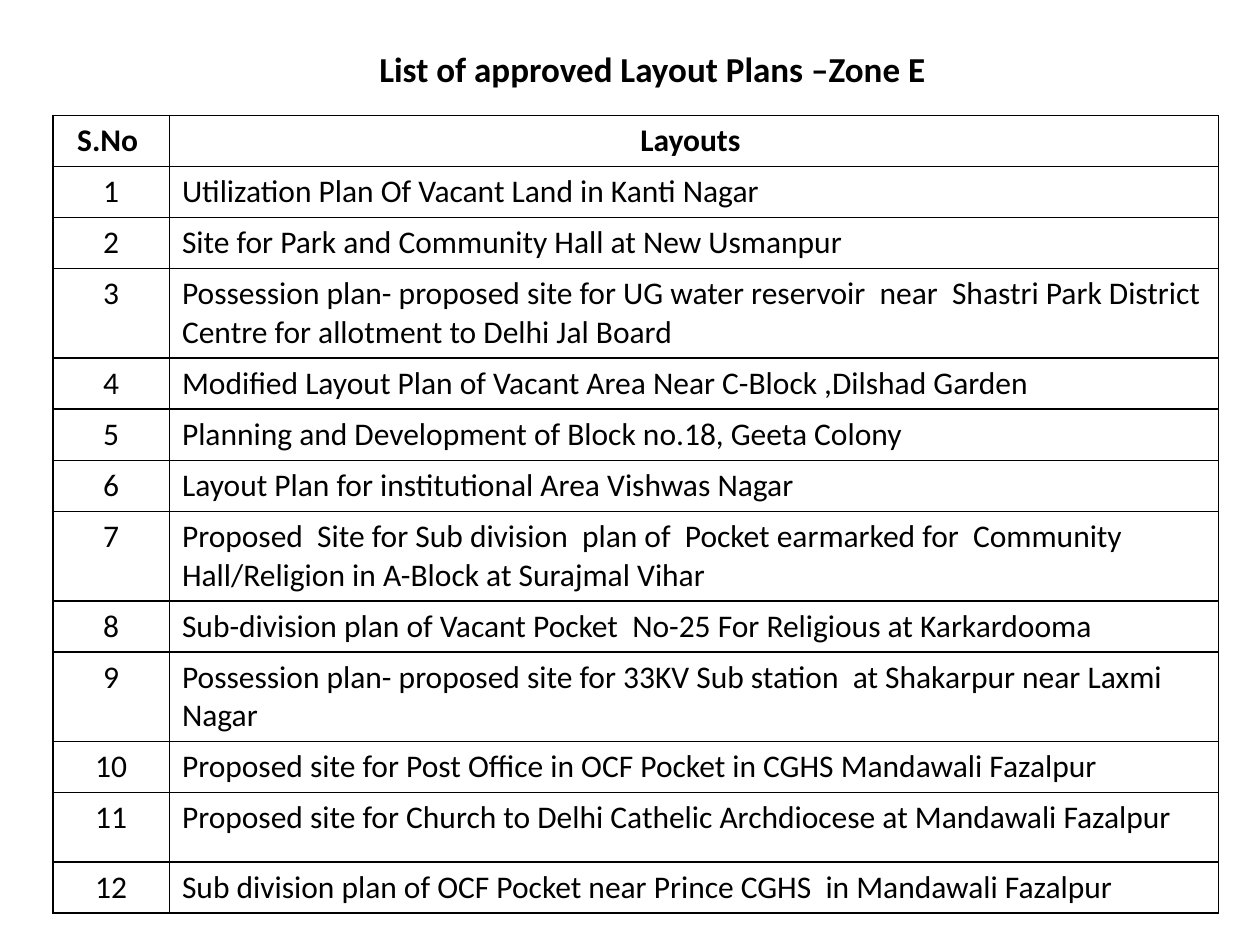
from lxml import etree
from pptx import Presentation, util as u
from pptx.dml.color import RGBColor
from pptx.enum import text
from pptx.oxml import ns

BLACK = RGBColor(0, 0, 0)
FONT = "Calibri"
WIDE, HIGH = u.Inches(10), u.Inches(7.5)
ONE, TWO, LAST = 0.4, 0.7, 0.55  # row heights in inches

HEAD = ("S.No ", "Layouts ")
PLANS = [
    ("Utilization Plan Of Vacant Land in Kanti Nagar", ONE),
    ("Site for Park and Community Hall at New Usmanpur", ONE),
    ("Possession plan- proposed site for UG water reservoir  near  Shastri Park "
     "District Centre for allotment to Delhi Jal Board", TWO),
    ("Modified Layout Plan of Vacant Area Near C-Block ,Dilshad Garden", ONE),
    ("Planning and Development of Block no.18, Geeta Colony", ONE),
    ("Layout Plan for institutional Area Vishwas Nagar", ONE),
    ("Proposed  Site for Sub division  plan of  Pocket earmarked for  Community "
     "Hall/Religion in A-Block at Surajmal Vihar", TWO),
    ("Sub-division plan of Vacant Pocket  No-25 For Religious at Karkardooma", ONE),
    ("Possession plan- proposed site for 33KV Sub station  at Shakarpur near "
     "Laxmi Nagar", TWO),
    ("Proposed site for Post Office in OCF Pocket in CGHS Mandawali Fazalpur", ONE),
    ("Proposed site for Church to Delhi Cathelic Archdiocese at Mandawali Fazalpur",
     LAST),
    ("Sub division plan of OCF Pocket near Prince CGHS  in Mandawali Fazalpur", ONE),
]


def share(left, top, width, height):
    """Turn shares of the slide's size into a box of lengths."""
    return [int(part * full) for part, full in
            zip((left, top, width, height), (WIDE, HIGH, WIDE, HIGH))]


def write(frame, words, size, bold, mid):
    frame.text = words
    para = frame.paragraphs[0]
    para.alignment = text.PP_ALIGN.CENTER if mid else text.PP_ALIGN.LEFT
    font = para.runs[0].font
    font.name, font.size, font.bold = FONT, u.Pt(size), bold
    font.color.rgb = BLACK


def edge(cell):
    """Draw a thin black line on each side of the cell."""
    props = cell._tc.get_or_add_tcPr()
    for side in ("lnL", "lnR", "lnT", "lnB"):
        line = etree.SubElement(props, ns.qn(f"a:{side}"), w=str(u.Pt(1)))
        fill = etree.SubElement(line, ns.qn("a:solidFill"))
        etree.SubElement(fill, ns.qn("a:srgbClr"), val=str(BLACK))


def add_title(slide, box):
    frame = slide.shapes.add_textbox(*box).text_frame
    frame.word_wrap = True
    frame.auto_size = text.MSO_AUTO_SIZE.SHAPE_TO_FIT_TEXT
    write(frame, "List of approved Layout Plans –Zone E ", 20, True, True)


def add_list(slide, box):
    rows = [(HEAD, ONE)]
    rows += [((str(num), plan), tall) for num, (plan, tall) in enumerate(PLANS, 1)]
    table = slide.shapes.add_table(len(rows), len(HEAD), *box).table
    table.horz_banding = False
    table.columns[0].width = int(box[2] * 0.1)
    table.columns[1].width = box[2] - table.columns[0].width
    for r, (words, tall) in enumerate(rows):
        table.rows[r].height = u.Inches(tall)
        for c, word in enumerate(words):
            cell = table.cell(r, c)
            write(cell.text_frame, word, 18, r == 0, r == 0 or c == 0)
            edge(cell)
            cell.fill.background()


def main():
    deck = Presentation()
    deck.slide_width, deck.slide_height = WIDE, HIGH
    slide = deck.slides.add_slide(deck.slide_layouts[6])
    add_list(slide, share(0.042, 0.122, 0.925, 0.833))
    add_title(slide, share(0.1, 0.044, 0.842, 0.058))
    deck.save("out.pptx")


if __name__ == "__main__":
    main()
